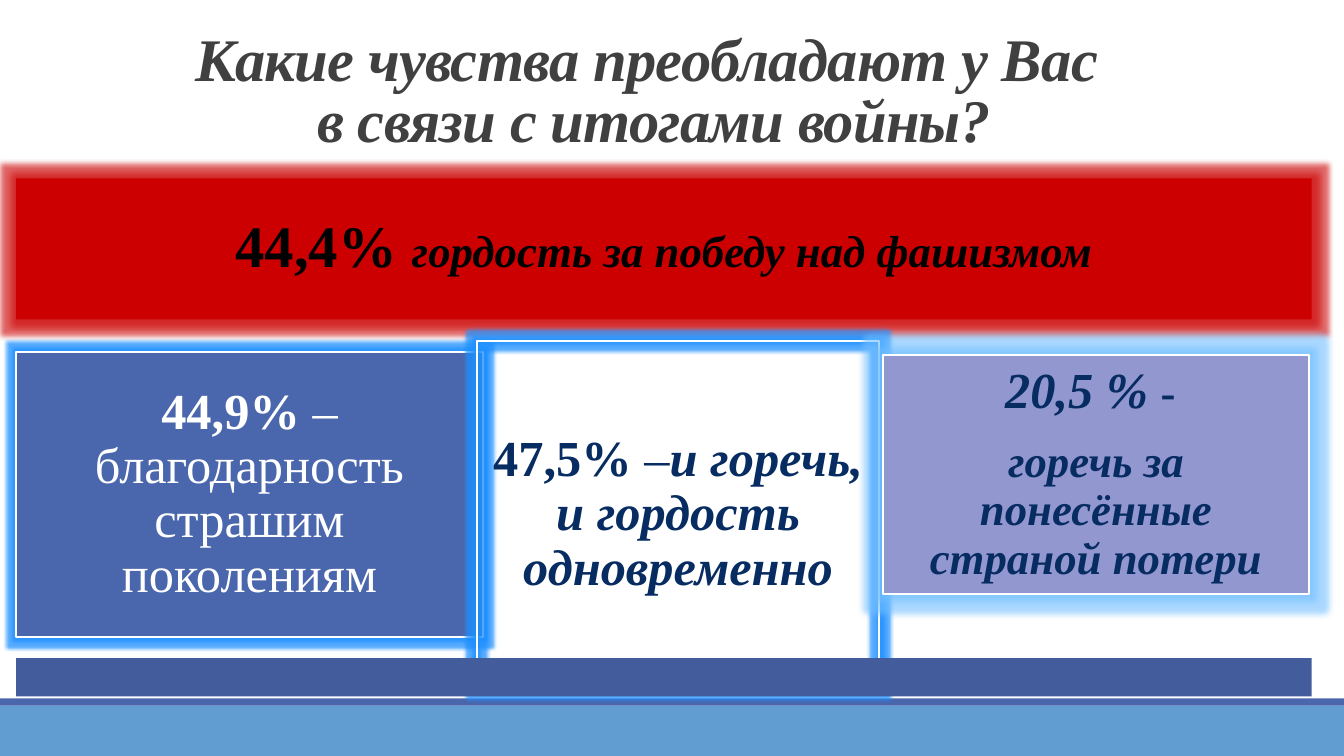
from lxml import etree
from pptx import Presentation
from pptx.dml.color import RGBColor
from pptx.enum.shapes import MSO_SHAPE
from pptx.enum.text import MSO_ANCHOR, PP_ALIGN
from pptx.oxml.ns import qn
from pptx.util import Inches, Pt

RECTANGLE = MSO_SHAPE.RECTANGLE
MIDDLE, BOTTOM = MSO_ANCHOR.MIDDLE, MSO_ANCHOR.BOTTOM
CENTER = PP_ALIGN.CENTER
FONT = "Times New Roman"
NAVY = "072C62"
SKY = "1E90FF"


def color(value):
    return RGBColor.from_string(value)


def add_glow(shape, value, radius, opacity):
    effects = shape._element.spPr.find(qn("a:effectLst"))
    glow = etree.SubElement(effects, qn("a:glow"), rad=str(Inches(radius)))
    tint = etree.SubElement(glow, qn("a:srgbClr"), val=value)
    etree.SubElement(tint, qn("a:alpha"), val=str(opacity * 1000))


def add_panel(page, box, fill=None, outlined=False, glow=None):
    panel = page.shapes.add_shape(RECTANGLE, *map(Inches, box))
    panel.shadow.inherit = False
    if fill:
        panel.fill.solid()
        panel.fill.fore_color.rgb = color(fill)
    else:
        panel.fill.background()
    if outlined:
        panel.line.color.rgb = color("FFFFFF")
        panel.line.width = Pt(1.25)
    else:
        panel.line.fill.background()
    if glow:
        add_glow(panel, *glow)
    return panel


def write_text(shape, paragraphs, text_color, inset, spacing=0.9, anchor=MIDDLE):
    frame = shape.text_frame
    frame.word_wrap = True
    frame.vertical_anchor = anchor
    frame.margin_left = frame.margin_right = Inches(inset)
    frame.margin_top = frame.margin_bottom = Inches(inset)
    for index, spans in enumerate(paragraphs):
        para = frame.add_paragraph() if index else frame.paragraphs[0]
        para.alignment = CENTER
        para.line_spacing = spacing
        para.space_before = Pt(14 if index else 0)
        para.font.name = FONT
        para.font.color.rgb = color(text_color)
        for text, size, bold, italic in spans:
            for number, line in enumerate(text.split("\n")):
                if number:
                    para.add_line_break()
                span = para.add_run()
                span.text = line
                font = span.font
                font.name = FONT
                font.color.rgb = color(text_color)
                font.size, font.bold, font.italic = Pt(size), bold, italic


def add_footer(page, left, top, width):
    add_panel(page, (left, top + 0.07, width, 0.5), "629DD1")
    add_panel(page, (left, top, width, 0.07), "4A66AC")


def add_title(page, box):
    title = page.shapes.add_textbox(*map(Inches, box))
    question = "Какие чувства преобладают у Вас \nв связи с итогами войны?"
    write_text(title, [[(question, 43.2, True, True)]],
               "404040", 0.05, 0.85, BOTTOM)
    for span in title.text_frame.paragraphs[0].runs:
        span._r.get_or_add_rPr().set("spc", "-50")


def add_answers(page, left, top, width):
    banner = add_panel(page, (left, top, width, 1.4), "CC0000",
                       glow=("CC0000", 0.11, 60))
    write_text(banner, [[("44,4% ", 42, True, False),
                         ("гордость за победу над фашизмом", 32, True, True)]],
               "000000", 0.17)

    gratitude = [[("44,9% ", 36, True, False),
                  ("–благодарность страшим поколениям", 36, False, False)]]
    both = [[("47,5%", 36, True, False), (" –", 36, False, False),
             ("и горечь, и гордость одновременно", 36, True, True)]]
    grief = [[("20,5 % ", 36, True, True), ("- ", 32, True, False)],
             [("горечь за понесённые страной потери", 32, True, True)]]
    cards = [
        (0, 1.72, 4.63, 2.83, "4A66AC", (SKY, 0.07, 75), "FFFFFF", gratitude),
        (4.57, 1.61, 3.99, 3.45, None, (SKY, 0.07, 75), NAVY, both),
        (8.6, 1.75, 4.22, 2.37, "9297CF", ("72BFFF", 0.13, 60), NAVY, grief),
    ]
    for x, y, card_width, height, fill, glow, text_color, paragraphs in cards:
        card = add_panel(page, (left + x, top + y, card_width, height),
                         fill, True, glow)
        write_text(card, paragraphs, text_color, 0.15)

    add_panel(page, (left, top + 4.76, width, 0.38), "435D9C")


def main():
    deck = Presentation()
    deck.slide_width, deck.slide_height = Inches(13.33), Inches(7.5)
    page = deck.slides.add_slide(deck.slide_layouts[6])
    add_footer(page, 0, 6.93, 13.33)
    add_title(page, (-0.18, 0.31, 13.33, 1.28))
    add_answers(page, 0.16, 1.77, 12.85)
    deck.save("out.pptx")


if __name__ == "__main__":
    main()
